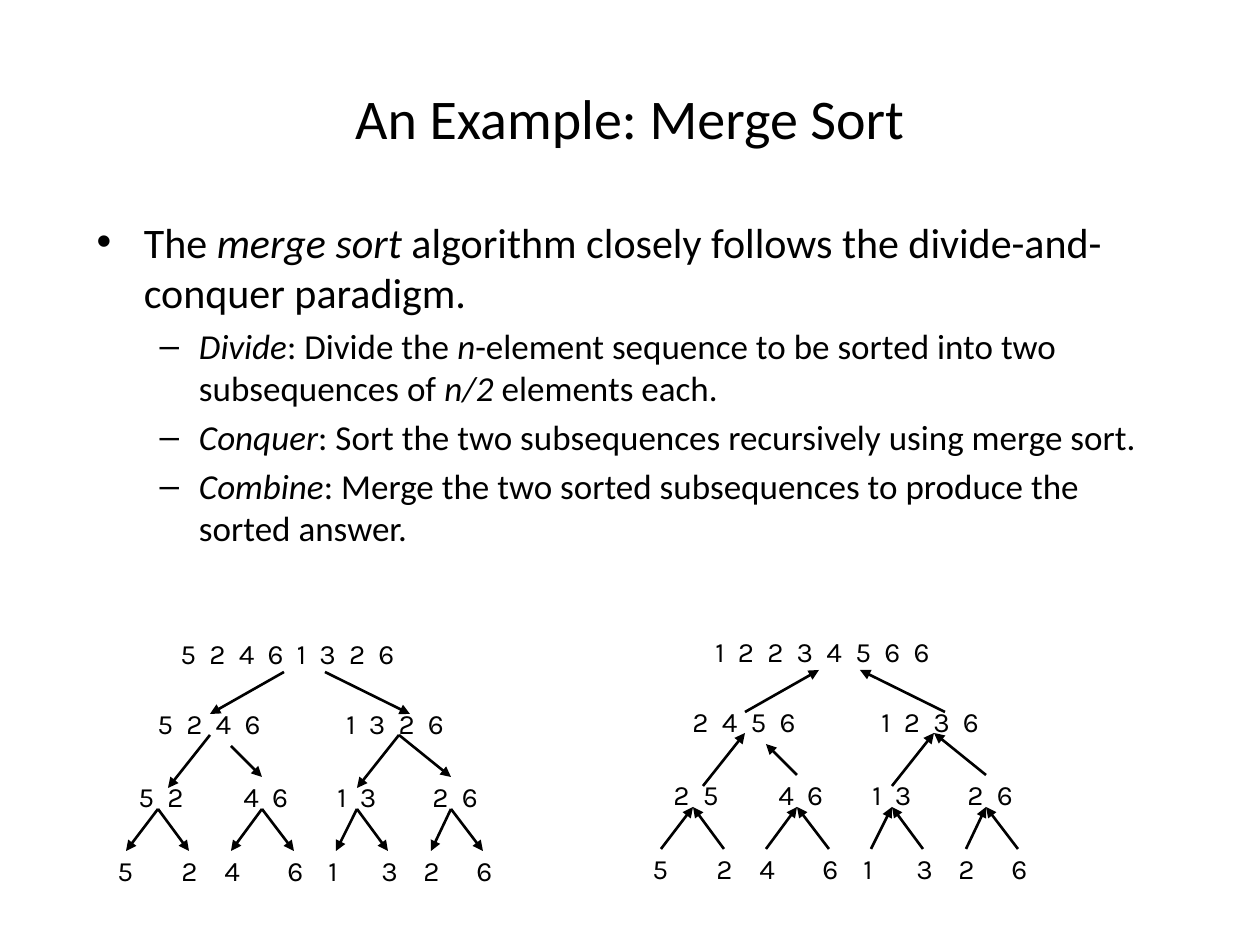
from lxml.etree import SubElement
from pptx import Presentation
from pptx.dml.color import RGBColor
from pptx.enum.shapes import MSO_CONNECTOR
from pptx.enum.text import MSO_ANCHOR, MSO_AUTO_SIZE, PP_ALIGN
from pptx.oxml.ns import qn
from pptx.util import Pt

PX = 914400 / 126
COLORS = {"ink": "000000"}
TITLE = "An Example: Merge Sort"

# (level, [(text, italic), ...])
BODY = [
    (0, [("The ", False), ("merge sort ", True),
         ("algorithm closely follows the divide-and-conquer paradigm.", False)]),
    (1, [("Divide", True), (": Divide the ", False), ("n", True),
         ("-element sequence to be sorted into two subsequences of ", False),
         ("n/2", True), (" elements each.", False)]),
    (1, [("Conquer", True),
         (": Sort the two subsequences recursively using merge sort.", False)]),
    (1, [("Combine", True),
         (": Merge the two sorted subsequences to produce the sorted answer.", False)]),
]
BODY_SIZES = [24, 20]

# Digits of each node, one string per tree level
DIVIDE = [["52461326"], ["5246", "1326"], ["52", "46", "13", "26"], list("52461326")]
COMBINE = [["12234566"], ["2456", "1236"], ["25", "46", "13", "26"], list("52461326")]
# (nodes, left of tree, top of tree, arrows point up)
TREES = [(DIVIDE, 105, 630, False), (COMBINE, 640, 628, True)]

# Places below are measured from the top left corner of a tree
NODE_TOPS = [0, 70, 143, 217]
NODE_LEFTS = [[63], [40, 229], [21, 126, 220, 315],
              [0, 64, 107, 170, 211, 264, 306, 359]]
NODE_WIDTHS = {8: 271, 4: 139, 2: 73, 1: 40}
NODE_HEIGHT = 47
# (parent x, parent y, child x, child y)
BRANCHES = [(179, 42, 105, 84), (220, 42, 305, 84),
            (105, 105, 63, 158), (126, 116, 157, 147),
            (294, 105, 252, 158), (294, 105, 346, 147)]
PAIRS = [(53, 21, 84), (157, 126, 189), (252, 231, 283), (346, 326, 378)]
BRANCHES += [(top, 179, end, 221) for top, *ends in PAIRS for end in ends]


def emu(*lengths):
    return [round(n * PX) for n in lengths]


def place(shape, *box):
    shape.left, shape.top, shape.width, shape.height = emu(*box)


def add_run(p, text, size, font, italic=None):
    r = p.add_run()
    r.text = text
    r.font.size = Pt(size)
    r.font.name = font
    r.font.italic = italic
    r.font.color.rgb = RGBColor.from_string(COLORS["ink"])


def add_node(slide, digits, left, top):
    box = slide.shapes.add_textbox(*emu(left, top, NODE_WIDTHS[len(digits)], NODE_HEIGHT))
    tf = box.text_frame
    tf.word_wrap = False
    tf.auto_size = MSO_AUTO_SIZE.SHAPE_TO_FIT_TEXT
    add_run(tf.paragraphs[0], "  ".join(digits), 16, "Karla")


def add_arrow(slide, start, end):
    line = slide.shapes.add_connector(MSO_CONNECTOR.STRAIGHT, *emu(*start, *end))
    line.line.color.rgb = RGBColor.from_string(COLORS["ink"])
    line.line.width = Pt(1.5)
    SubElement(line.line._get_or_add_ln(), qn("a:tailEnd"), type="triangle")
    SubElement(line._element.spPr, qn("a:effectLst"))


def add_tree(slide, levels, x, y, upward):
    for digits_row, lefts, top in zip(levels, NODE_LEFTS, NODE_TOPS):
        for digits, left in zip(digits_row, lefts):
            add_node(slide, digits, x + left, y + top)
    for px, py, cx, cy in BRANCHES:
        ends = [(x + px, y + py), (x + cx, y + cy)]
        add_arrow(slide, *(reversed(ends) if upward else ends))


def main():
    prs = Presentation()
    prs.slide_width, prs.slide_height = emu(1260, 945)
    slide = prs.slides.add_slide(prs.slide_layouts[1])

    title, body = slide.placeholders
    place(title, 63, 38, 1134, 158)
    title.text_frame.vertical_anchor = MSO_ANCHOR.MIDDLE
    p = title.text_frame.paragraphs[0]
    p.alignment = PP_ALIGN.CENTER
    add_run(p, TITLE, 32, "Calibri")

    place(body, 84, 210, 1071, 683)
    tf = body.text_frame
    for i, (level, runs) in enumerate(BODY):
        p = tf.add_paragraph() if i else tf.paragraphs[0]
        p.level = level
        for text, italic in runs:
            add_run(p, text, BODY_SIZES[level], "Calibri", italic)

    for tree in TREES:
        add_tree(slide, *tree)
    prs.save("out.pptx")


if __name__ == "__main__":
    main()
